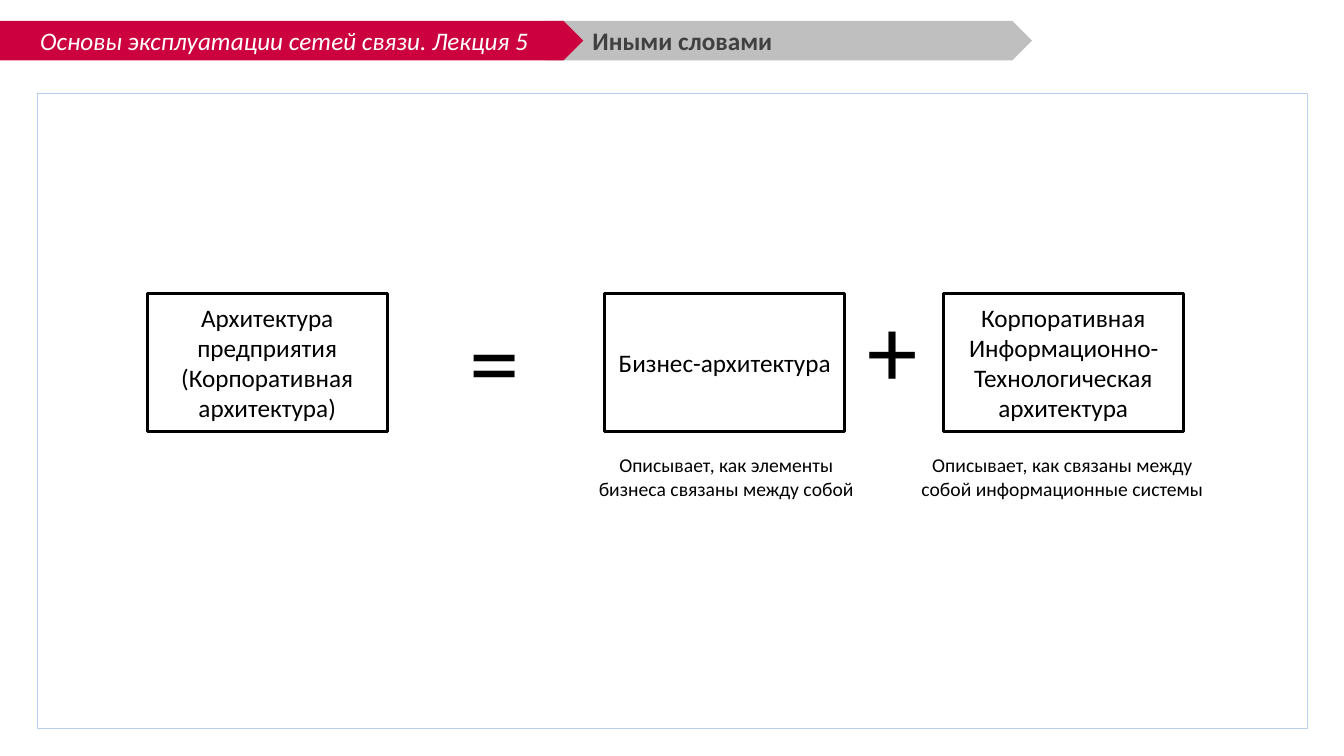
"""Build the slide that splits enterprise architecture into two parts."""
from dataclasses import dataclass

import pptx
import pptx.dml.color
import pptx.enum.shapes
import pptx.enum.text
import pptx.util
from pptx.util import Cm

COLORS = {
    "red": "CC003F",
    "gray": "BFBFBF",
    "title": "404040",
    "frame": "B8D0ED",
    "white": "FFFFFF",
    "black": "000000",
}
Geometry = pptx.enum.shapes.MSO_SHAPE
Align = pptx.enum.text.PP_ALIGN
Anchor = pptx.enum.text.MSO_ANCHOR


@dataclass(frozen=True)
class Area:
    left: float
    top: float
    width: float
    height: float

    def lengths(self) -> tuple[Cm, Cm, Cm, Cm]:
        return Cm(self.left), Cm(self.top), Cm(self.width), Cm(self.height)


@dataclass(frozen=True)
class Label:
    text: str
    area: Area


HEADER_TOP, HEADER_HEIGHT = 0.53, 0.99
BOX_TOP, BOX_WIDTH, BOX_HEIGHT = 7.39, 6.05, 3.48
CAPTION_TOP, CAPTION_HEIGHT = 11.3, 1.45

GRAY_BANNER = Area(13.74, HEADER_TOP, 12.27, HEADER_HEIGHT)
FRAME = Area(0.94, 2.34, 32, 16)
LECTURE = Label("Основы эксплуатации сетей связи. Лекция 5",
                Area(-0.13, HEADER_TOP, 14.83, HEADER_HEIGHT))
TITLE = Label("Иными словами", Area(14.68, HEADER_TOP, 10.52, HEADER_HEIGHT))
ARCHITECTURES = [
    Label(text, Area(left, BOX_TOP, BOX_WIDTH, BOX_HEIGHT))
    for text, left in [
        ("Архитектура предприятия (Корпоративная архитектура)", 3.71),
        ("Бизнес-архитектура", 15.24),
        ("Корпоративная Информационно-Технологическая архитектура", 23.77),
    ]
]
OPERATORS = [
    Label("=", Area(11.58, 7.39, 1.8, 3.33)),
    Label("+", Area(21.62, 7.11, 1.8, 3.33)),
]
CAPTIONS = [
    Label("Описывает, как элементы бизнеса связаны между собой",
          Area(14.66, CAPTION_TOP, 7.29, CAPTION_HEIGHT)),
    Label("Описывает, как связаны между собой информационные системы",
          Area(22.94, CAPTION_TOP, 7.67, CAPTION_HEIGHT)),
]


def color(name: str) -> pptx.dml.color.RGBColor:
    return pptx.dml.color.RGBColor.from_string(COLORS[name])


def write_text(shape, text: str, *, size: float = 18, ink: str = "black",
               bold: bool = False, italic: bool = False, wrap: bool = True,
               align=Align.CENTER, anchor=Anchor.MIDDLE) -> None:
    frame = shape.text_frame
    frame.word_wrap = wrap
    frame.vertical_anchor = anchor
    paragraph = frame.paragraphs[0]
    paragraph.alignment = align
    run = paragraph.add_run()
    run.text = text
    run.font.name = "Calibri"
    run.font.size = pptx.util.Pt(size)
    run.font.bold = bold
    run.font.italic = italic
    run.font.color.rgb = color(ink)


def add_shape(slide, area: Area, *, geometry=Geometry.RECTANGLE,
              fill: str | None = None, line: str | None = None,
              line_width: float = 2):
    shape = slide.shapes.add_shape(geometry, *area.lengths())
    shape.shadow.inherit = False
    if fill:
        shape.fill.solid()
        shape.fill.fore_color.rgb = color(fill)
    else:
        shape.fill.background()
    if line:
        shape.line.color.rgb = color(line)
        shape.line.width = pptx.util.Pt(line_width)
    else:
        shape.line.fill.background()
    return shape


def add_text(slide, label: Label, **text_format) -> None:
    box = slide.shapes.add_textbox(*label.area.lengths())
    write_text(box, label.text, **text_format)


def main() -> None:
    presentation = pptx.Presentation()
    presentation.slide_width = Cm(33.87)
    presentation.slide_height = Cm(19.05)
    slide = presentation.slides.add_slide(presentation.slide_layouts[6])

    add_shape(slide, GRAY_BANNER, geometry=Geometry.PENTAGON, fill="gray")
    add_shape(slide, FRAME, line="frame", line_width=0.25)
    lecture = add_shape(slide, LECTURE.area, geometry=Geometry.PENTAGON, fill="red")
    write_text(lecture, LECTURE.text, ink="white", italic=True)
    add_text(slide, TITLE, ink="title", bold=True, align=Align.LEFT)

    for architecture in ARCHITECTURES:
        box = add_shape(slide, architecture.area, fill="white", line="black")
        write_text(box, architecture.text)
    for operator in OPERATORS:
        add_text(slide, operator, size=72, wrap=False, align=Align.LEFT, anchor=Anchor.TOP)
    for caption in CAPTIONS:
        add_text(slide, caption, size=14, anchor=Anchor.TOP)

    presentation.save("out.pptx")


if __name__ == "__main__":
    main()
